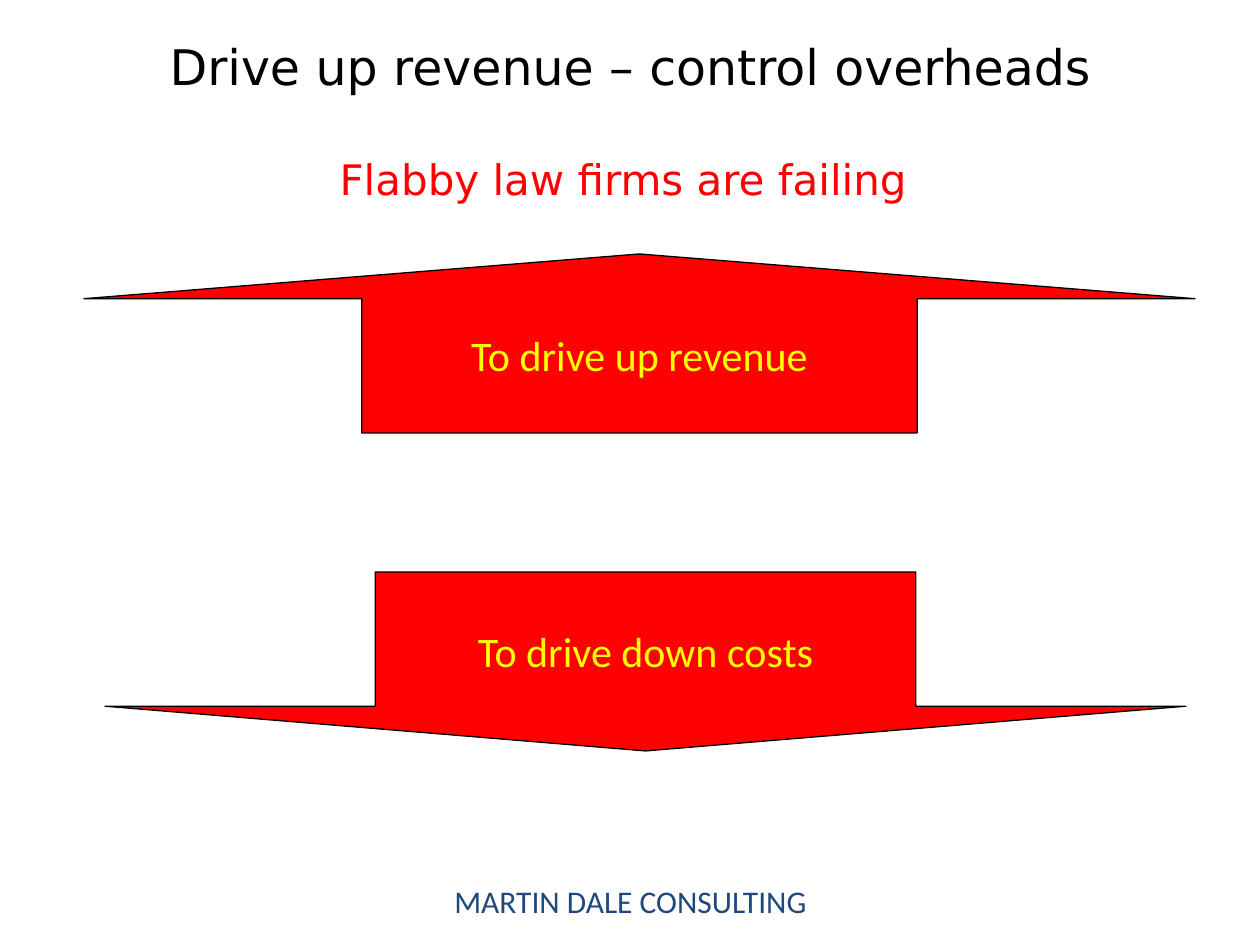
from pptx import Presentation
from pptx import util as u
from pptx.dml.color import RGBColor
from pptx.enum import shapes, text

PX = u.Inches(1) // 126
COLORS = {"black": "000000", "red": "FF0000", "yellow": "FFFF00", "navy": "1F497D"}


def color(name):
    return RGBColor.from_string(COLORS[name])


class SlideBuilder:
    heading_font = "DejaVu Sans"
    body_font = "Calibri"

    def __init__(self, page):
        self.page = page

    def set_line(self, para, words, font, size, ink):
        para.text = words
        para.alignment = text.PP_ALIGN.CENTER
        for span in para.runs:
            span.font.name = font
            span.font.size = u.Pt(size)
            span.font.color.rgb = color(ink)

    def text_box(self, bounds, lines, font, gap=0):
        """Add centred lines of (words, size, ink), set gap points apart."""
        box = self.page.shapes.add_textbox(*(n * PX for n in bounds))
        frame = box.text_frame
        frame.word_wrap = True
        frame.vertical_anchor = text.MSO_ANCHOR.MIDDLE
        for index, (words, size, ink) in enumerate(lines):
            para = frame.add_paragraph() if index else frame.paragraphs[0]
            self.set_line(para, words, font, size, ink)
            if index:
                para.space_before = u.Pt(gap)

    def arrow(self, kind, bounds, words):
        arrow = self.page.shapes.add_shape(kind, *(n * PX for n in bounds))
        arrow.shadow.inherit = False
        arrow.adjustments[0] = 0.5
        arrow.adjustments[1] = 0.25
        arrow.fill.solid()
        arrow.fill.fore_color.rgb = color("red")
        arrow.line.color.rgb = color("black")
        arrow.line.width = u.Pt(0.75)
        frame = arrow.text_frame
        frame.word_wrap = False
        frame.vertical_anchor = text.MSO_ANCHOR.MIDDLE
        self.set_line(frame.paragraphs[0], words, self.body_font, 24, "yellow")


def main():
    deck = Presentation()
    deck.slide_width, deck.slide_height = 1260 * PX, 945 * PX
    builder = SlideBuilder(deck.slides.add_slide(deck.slide_layouts[6]))

    builder.text_box((431, 876, 399, 50), [("MARTIN DALE CONSULTING", 18, "navy")],
                     builder.body_font)
    builder.text_box((63, 16, 1134, 208),
                     [("Drive up revenue – control overheads", 28, "black"),
                      ("Flabby law firms are failing ", 24, "red")],
                     builder.heading_font, gap=33)

    kinds = shapes.MSO_SHAPE
    builder.arrow(kinds.UP_ARROW, (84, 254, 1111, 179), "To drive up revenue")
    builder.arrow(kinds.DOWN_ARROW, (105, 572, 1081, 179), "To drive down costs")

    deck.save("out.pptx")


if __name__ == "__main__":
    main()
